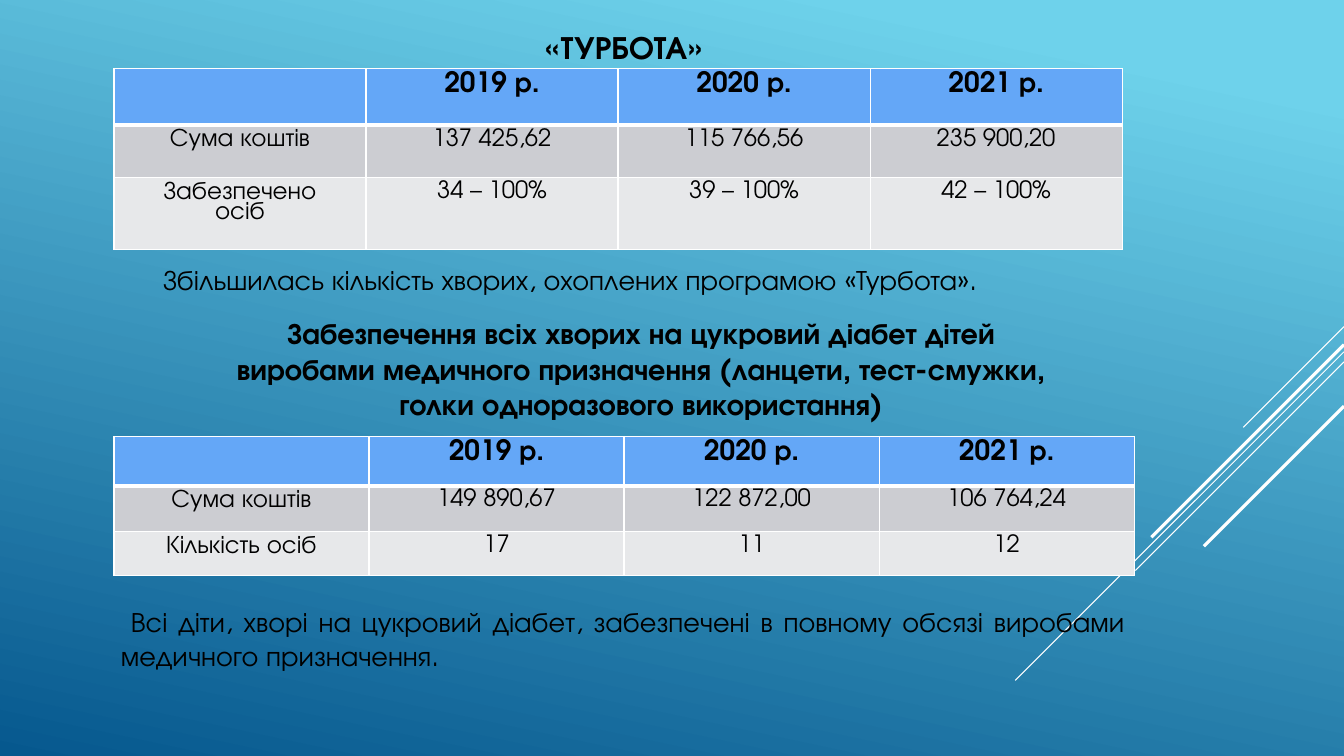
from dataclasses import dataclass

from lxml import etree
from pptx import Presentation
from pptx.dml.color import RGBColor
from pptx.enum.shapes import MSO_CONNECTOR
from pptx.enum.text import MSO_ANCHOR, PP_ALIGN
from pptx.oxml.ns import qn
from pptx.util import Inches, Pt

STRAIGHT = MSO_CONNECTOR.STRAIGHT
TOP, MIDDLE = MSO_ANCHOR.TOP, MSO_ANCHOR.MIDDLE
CENTER, JUSTIFY = PP_ALIGN.CENTER, PP_ALIGN.JUSTIFY


@dataclass(frozen=True)
class Theme:
    font: str = "TeX Gyre Adventor"
    text: str = "000000"
    line: str = "FFFFFF"
    header: str = "64A7F7"
    bands: tuple = ("CCCDD2", "E7E8EA")
    background: tuple = ((0.1, "6ED2EB"), (1, "06588E"))
    title_size: float = 23.1
    heading_size: float = 21
    body_size: float = 20
    label_size: float = 18
    value_size: float = 17


class SlideBuilder:
    def __init__(self, prs, theme):
        self.s = prs.slides.add_slide(prs.slide_layouts[6])
        self.theme = theme

    def background(self):
        fill = self.s.background.fill
        fill.gradient()
        fill.gradient_angle = 360 - 102
        for stop, (position, color) in zip(fill.gradient_stops, self.theme.background):
            stop.position = position
            stop.color.rgb = RGBColor.from_string(color)

    def diagonal(self, top, length, width):
        """Draw a 45-degree line down and left from the right slide edge."""
        right = 13.33
        c = self.s.shapes.add_connector(
            STRAIGHT, Inches(right), Inches(top),
            Inches(right - length), Inches(top + length))
        c.line.color.rgb = RGBColor.from_string(self.theme.line)
        c.line.width = Pt(width)
        etree.SubElement(c._element.spPr, qn("a:effectLst"))

    def style(self, p, size, bold=False, align=CENTER):
        p.alignment = align
        p.font.name = self.theme.font
        p.font.size = Pt(size)
        p.font.bold = bold
        p.font.color.rgb = RGBColor.from_string(self.theme.text)

    def text(self, box, text, size, bold=False, align=CENTER,
             anchor=TOP, inset=0.1, indent=0):
        sp = self.s.shapes.add_textbox(*map(Inches, box))
        tf = sp.text_frame
        tf.word_wrap = True
        tf.vertical_anchor = anchor
        tf.margin_left = Inches(inset)
        p = tf.paragraphs[0]
        p.text = text
        self.style(p, size, bold, align)
        if indent:
            p._p.get_or_add_pPr().set("indent", str(Inches(indent)))

    def border(self, cell, **widths):
        tcPr = cell._tc.get_or_add_tcPr()
        for side in "LRTB":
            ln = etree.SubElement(tcPr, qn(f"a:ln{side}"), w=str(Pt(widths.get(side, 1))))
            fill = etree.SubElement(ln, qn("a:solidFill"))
            etree.SubElement(fill, qn("a:srgbClr"), val=self.theme.line)

    def table(self, left, top, col_width, heights, rows):
        n = len(rows[0])
        tbl = self.s.shapes.add_table(
            len(rows), n, Inches(left), Inches(top),
            Inches(col_width * n), Inches(sum(heights))).table
        for col in tbl.columns:
            col.width = Inches(col_width)
        for i, (height, values) in enumerate(zip(heights, rows)):
            tbl.rows[i].height = Inches(height)
            for j, value in enumerate(values):
                self.cell(tbl.cell(i, j), i, j, value)

    def cell(self, cell, row, col, value):
        t = self.theme
        header = row == 0
        self.border(cell, T=3 if row == 1 else 1, B=3 if header else 1)
        cell.fill.solid()
        cell.fill.fore_color.rgb = RGBColor.from_string(
            t.header if header else t.bands[(row - 1) % 2])
        cell.margin_top, cell.margin_bottom = Inches(0.06), Inches(0)
        cell.text = value
        size = t.body_size if header else t.label_size if col == 0 else t.value_size
        for p in cell.text_frame.paragraphs:
            self.style(p, size, bold=header)
            p.line_spacing = 0.85


DIAGONALS = [(3.24, 1, 0.75), (3.49, 3.26, 0.75), (3.59, 2.07, 0.75),
             (3.42, 1.91, 2.25), (4.03, 1.39, 2.25)]
YEARS = ["", "2019 р.", "2020 р.", "2021 р."]
CARE = [YEARS,
        ["Сума коштів", "137 425,62", "115 766,56", "235 900,20"],
        ["Забезпечено\nосіб", "34 – 100%", "39 – 100%", "42 – 100%"]]
DIABETES = [YEARS,
            ["Сума коштів", "149 890,67", "122 872,00", "106 764,24"],
            ["Кількість осіб", "17", "11", "12"]]


def main():
    prs = Presentation()
    prs.slide_width, prs.slide_height = Inches(13.33), Inches(7.5)
    theme = Theme()
    b = SlideBuilder(prs, theme)
    b.background()
    for top, length, width in DIAGONALS:
        b.diagonal(top, length, width)

    b.text((0.96, 0.24, 9.11, 0.44), "«ТУРБОТА»", theme.title_size,
           bold=True, anchor=MIDDLE, inset=1.45)
    b.table(1.13, 0.68, 2.5, [0.56, 0.52, 0.72], CARE)
    b.text((1.13, 2.56, 10.15, 0.44),
           "Збільшилась кількість хворих, охоплених програмою «Турбота».",
           theme.body_size, align=JUSTIFY, indent=0.39)

    b.text((1.91, 3.08, 8.9, 1.16),
           "Забезпечення всіх хворих на цукровий діабет дітей\v"
           "виробами медичного призначення (ланцети, тест-смужки, "
           "голки одноразового використання)",
           theme.heading_size, bold=True)
    b.table(1.13, 4.33, 2.53, [0.49, 0.45, 0.44], DIABETES)
    b.text((1.1, 5.95, 10.15, 0.77),
           "Всі діти, хворі на цукровий діабет, забезпечені в повному обсязі "
           "виробами медичного призначення.",
           theme.body_size, align=JUSTIFY, indent=0.1)

    prs.save("out.pptx")


if __name__ == "__main__":
    main()
